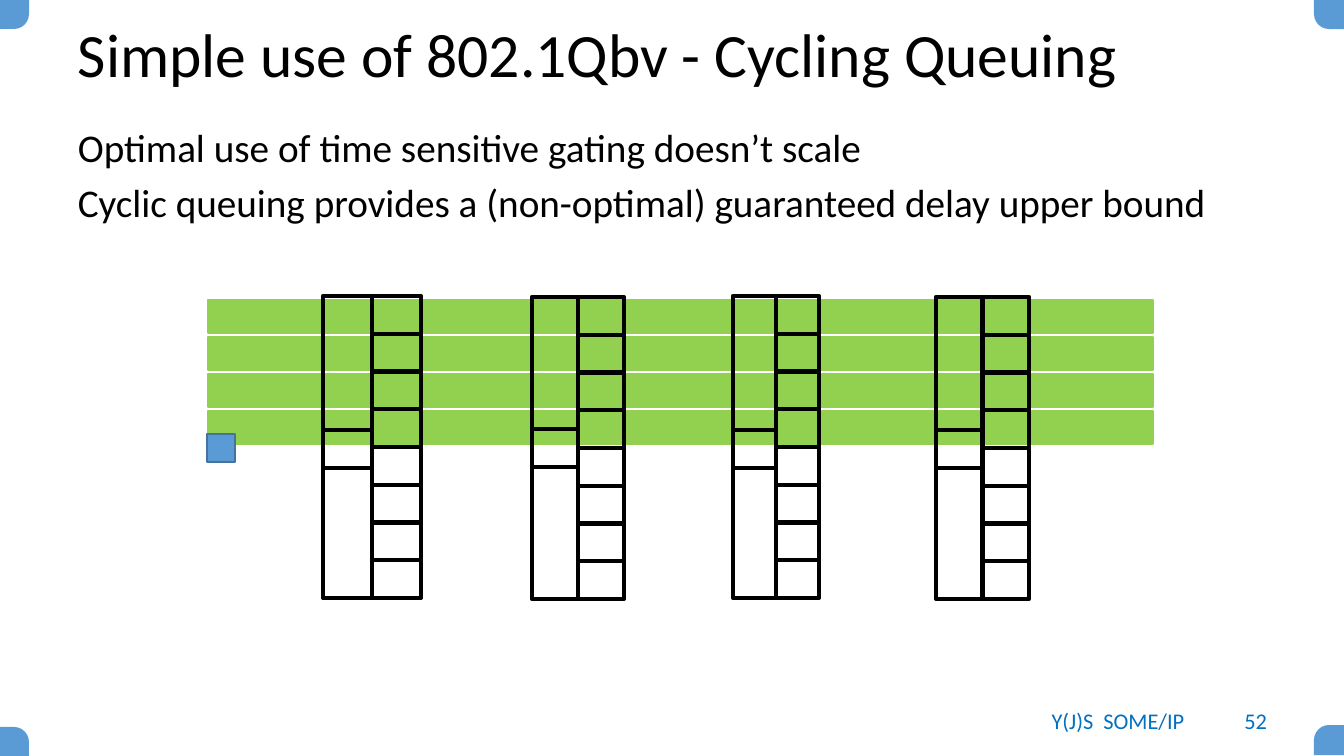
import pptx
import pptx.util
import pptx.dml.color
import pptx.enum.shapes
import pptx.enum.text
import pptx.oxml

RGB = pptx.dml.color.RGBColor
SHAPE = pptx.enum.shapes.MSO_SHAPE
LINE = pptx.enum.shapes.MSO_CONNECTOR.STRAIGHT
ALIGN = pptx.enum.text.PP_ALIGN
ANCHOR = pptx.enum.text.MSO_ANCHOR

BLACK = RGB(0x00, 0x00, 0x00)
GREEN = RGB(0x92, 0xD0, 0x50)
BLUE = RGB(0x5B, 0x9B, 0xD5)
DARK_BLUE = RGB(0x43, 0x73, 0x9E)
FOOTER_BLUE = RGB(0x00, 0x70, 0xC0)

# Content, lengths in px
TITLE = ["Simple use of 802.1Qbv - Cycling Queuing"]
BODY = [
    "Optimal use of time sensitive gating doesn’t scale",
    "Cyclic queuing provides a (non-optimal) guaranteed delay upper bound",
]
FOOTER = ["Y(J)S  SOME/IP"]
PAGE = ["52"]

CORNER = 30
CORNERS = [(-1, -1, 90), (1314, -1, 180), (1314, 725, 270), (-1, 727, 0)]  # left, top, turn

STREAMS = 4
STREAM_LEFT, STREAM_TOP, STREAM_W, STREAM_H, STREAM_STEP = 208, 300, 945, 33, 37
PACKET = (207, 434, 28, 28)

QUEUES = [(323, 296, 98, 430), (532, 297, 92, 429),
          (733, 296, 86, 430), (936, 297, 93, 430)]  # left, top, width, gate top
QUEUE_H, SLOTS, GATE_H = 302, 8, 38


def px(n):
    return pptx.util.Emu(round(n * 914400 / 100.8))


prs = pptx.Presentation()
prs.slide_width, prs.slide_height = px(1344), px(756)
s = prs.slides.add_slide(prs.slide_layouts[6])


def add_box(shapes, kind, box, fill=None, line=None, width=1):
    sp = shapes.add_shape(kind, *map(px, box))
    sp.shadow.inherit = False
    if fill is None:
        sp.fill.background()
    else:
        sp.fill.solid()
        sp.fill.fore_color.rgb = fill
    if line is None:
        sp.line.fill.background()
    else:
        sp.line.color.rgb = line
        sp.line.width = pptx.util.Pt(width)
    return sp


def add_line(shapes, x1, y1, x2, y2):
    c = shapes.add_connector(LINE, px(x1), px(y1), px(x2), px(y2))
    c.line.color.rgb = BLACK
    c.line.width = pptx.util.Pt(3)
    c._element.spPr.append(pptx.oxml.parse_xml(
        '<a:effectLst xmlns:a="http://schemas.openxmlformats.org/drawingml/2006/main"/>'))
    return c


def add_text(lines, box, size, color, align=ALIGN.LEFT, anchor=ANCHOR.MIDDLE,
             spacing=1.0, before=0):
    tf = s.shapes.add_textbox(*map(px, box)).text_frame
    tf.word_wrap = True
    tf.vertical_anchor = anchor
    for i, text in enumerate(lines):
        p = tf.add_paragraph() if i else tf.paragraphs[0]
        p.alignment = align
        p.line_spacing = spacing
        p.space_before = pptx.util.Pt(before)
        r = p.add_run()
        r.text = text
        r.font.name = "Calibri"
        r.font.size = pptx.util.Pt(size)
        r.font.color.rgb = color


# Corner decorations
for left, top, turn in CORNERS:
    sp = add_box(s.shapes, SHAPE.ROUND_1_RECTANGLE, (left, top, CORNER, CORNER), BLUE)
    sp.adjustments[0] = 0.5
    sp.rotation = turn

# Title, body and footer
add_text(TITLE, (68, 21, 1208, 73), 44, BLACK, spacing=0.9)
add_text(BODY, (68, 118, 1208, 143), 28, BLACK, anchor=ANCHOR.TOP, before=6)
add_text(FOOTER, (1018, 701, 200, 40), 16, FOOTER_BLUE, ALIGN.CENTER)
add_text(PAGE, (1209, 701, 68, 40), 16, FOOTER_BLUE, ALIGN.RIGHT)

# Green streams and the packet
for i in range(STREAMS):
    add_box(s.shapes, SHAPE.RECTANGLE,
            (STREAM_LEFT, STREAM_TOP + i * STREAM_STEP, STREAM_W, STREAM_H), GREEN, GREEN)
add_box(s.shapes, SHAPE.RECTANGLE, PACKET, BLUE, DARK_BLUE)

# Queues: frame, slots in the right half, divider down the middle
for left, top, width, gate_top in QUEUES:
    shapes = s.shapes.add_group_shape().shapes
    frame = add_box(shapes, SHAPE.RECTANGLE, (left, top, width, QUEUE_H), line=BLACK, width=3)
    middle = left + width / 2
    for i in range(1, SLOTS):
        y = top + i * QUEUE_H / SLOTS
        add_line(shapes, middle, y, left + width, y)
    divider = add_line(shapes, middle, top, middle, top + QUEUE_H)
    divider.begin_connect(frame, 0)
    divider.end_connect(frame, 2)

# Gates in the left halves
for left, top, width, gate_top in QUEUES:
    add_box(s.shapes, SHAPE.RECTANGLE, (left, gate_top, width / 2, GATE_H), line=BLACK, width=3)

prs.save("out.pptx")
